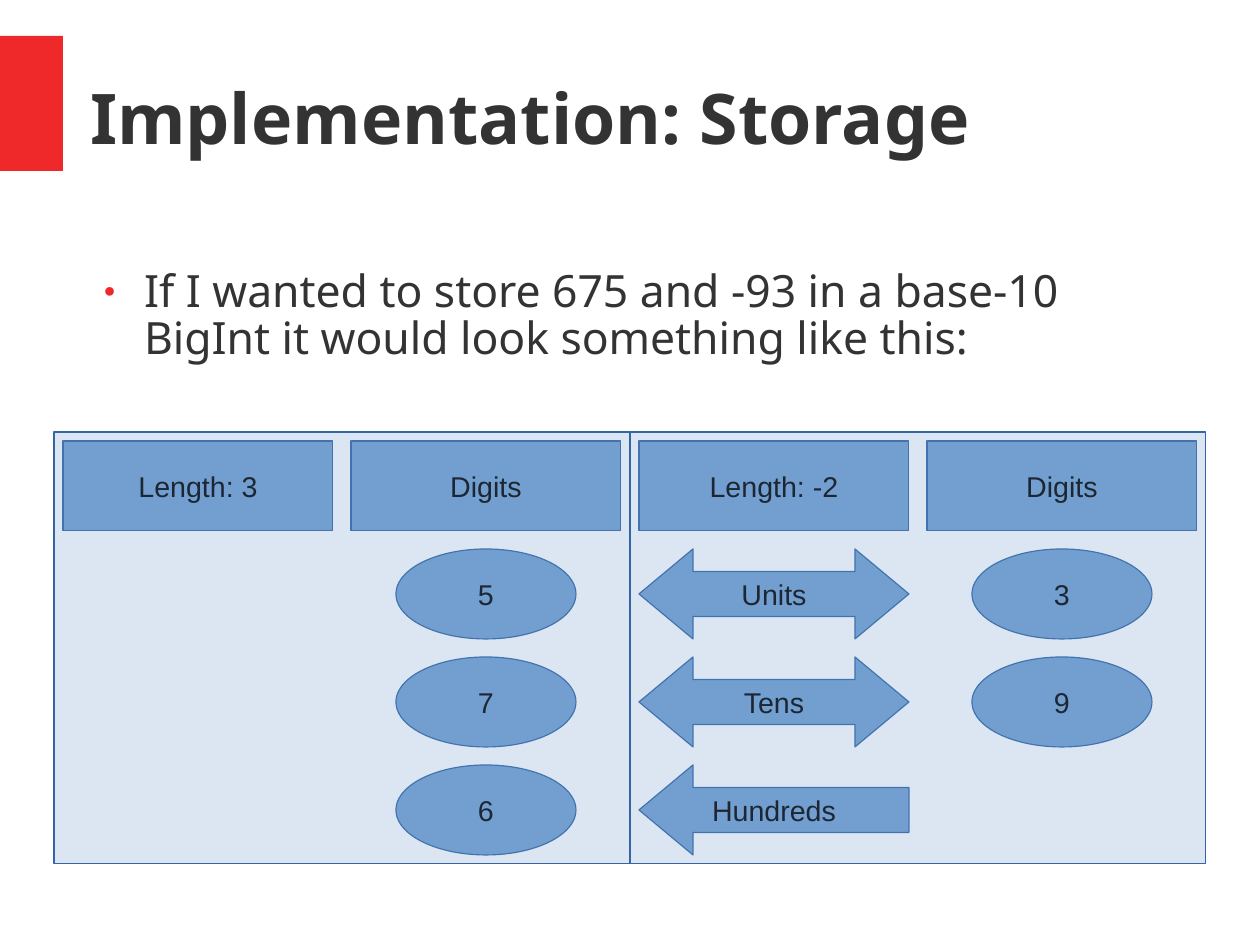
from dataclasses import dataclass
from typing import Any

from lxml.etree import SubElement
from pptx import Presentation
from pptx.dml.color import RGBColor
from pptx.enum.shapes import MSO_SHAPE as Preset
from pptx.enum.text import MSO_ANCHOR as Anchor, MSO_AUTO_SIZE as AutoSize, PP_ALIGN as Align
from pptx.oxml.ns import qn
from pptx.util import Cm, Pt

COLORS = {
    "accent": "EF2929",
    "heading": "333333",
    "block": "729FCF",
    "outline": "3465A4",
    "label": "000000",
}
NO_INSETS = {"margin_left": 0, "margin_right": 0, "margin_top": 0, "margin_bottom": 0}
TITLE_FRAME = {**NO_INSETS, "vertical_anchor": Anchor.MIDDLE, "word_wrap": True, "auto_size": AutoSize.NONE}
BODY_FRAME = {**TITLE_FRAME, "vertical_anchor": Anchor.TOP}
LABEL_FRAME = {"vertical_anchor": Anchor.MIDDLE, "word_wrap": False}
TITLE_FONT = {"name": "Noto Sans", "size": Pt(44), "bold": True}
BODY_FONT = {"name": "Noto Sans", "size": Pt(28)}
LABEL_FONT = {"name": "Arial", "size": Pt(18)}
TITLE_PARAGRAPH = {"alignment": Align.LEFT}
BODY_PARAGRAPH = {
    "alignment": Align.LEFT,
    "line_spacing": 0.88,
    "space_before": Pt(0),
    "space_after": Pt(14.1),
}
LABEL_PARAGRAPH = {"alignment": Align.CENTER}

PANEL_LEFT, PANEL_TOP, PANEL_SIZE = 1.2, 9.6, 12.8
PANEL_HEIGHT = 9.6
PADDING = 0.2
COLUMN_WIDTH, COLUMN_STEP = 6, 6.4
ROW_HEIGHT, ROW_STEP = 2, 2.4
DIGIT_WIDTH = 4
ARROW_HEAD = 0.6


@dataclass(frozen=True)
class Number:
    length: str
    digits: str


@dataclass(frozen=True)
class Place:
    name: str
    arrow: Preset
    right_inset: float = 0.25


NUMBERS = [Number("Length: 3", "576"), Number("Length: -2", "39")]
PLACES = [
    Place("Units", Preset.LEFT_RIGHT_ARROW),
    Place("Tens", Preset.LEFT_RIGHT_ARROW),
    Place("Hundreds", Preset.LEFT_ARROW, 0.85),
]


def apply(target: Any, values: dict[str, Any]) -> None:
    for attribute, value in values.items():
        setattr(target, attribute, value)


def rgb(name: str) -> RGBColor:
    return RGBColor.from_string(COLORS[name])


def write(shape: Any, text: str, frame: dict, paragraph: dict, font: dict, color: str) -> Any:
    apply(shape.text_frame, frame)
    line = shape.text_frame.paragraphs[0]
    apply(line, paragraph)
    run = line.add_run()
    run.text = text
    apply(run.font, font)
    run.font.color.rgb = rgb(color)
    return line


def place(shape: Any, left: float, top: float, width: float, height: float) -> None:
    apply(shape, {"left": Cm(left), "top": Cm(top), "width": Cm(width), "height": Cm(height)})


def add_block(slide: Any, preset: Preset, left: float, top: float, width: float, height: float) -> Any:
    block = slide.shapes.add_shape(preset, Cm(left), Cm(top), Cm(width), Cm(height))
    block.shadow.inherit = False
    block.fill.solid()
    block.fill.fore_color.rgb = rgb("block")
    block.line.color.rgb = rgb("outline")
    block.line.width = Pt(0.75)
    return block


def add_cell(slide: Any, preset: Preset, column: int, row: int, text: str, width: float = COLUMN_WIDTH) -> Any:
    left = PANEL_LEFT + PADDING + column * COLUMN_STEP + (COLUMN_WIDTH - width) / 2
    top = PANEL_TOP + PADDING + row * ROW_STEP
    cell = add_block(slide, preset, left, top, width, ROW_HEIGHT)
    write(cell, text, LABEL_FRAME, LABEL_PARAGRAPH, LABEL_FONT, "label")
    return cell


def add_number(slide: Any, index: int, number: Number) -> None:
    add_cell(slide, Preset.RECTANGLE, 2 * index, 0, number.length)
    add_cell(slide, Preset.RECTANGLE, 2 * index + 1, 0, "Digits")
    for row, digit in enumerate(number.digits, 1):
        add_cell(slide, Preset.OVAL, 2 * index + 1, row, digit, DIGIT_WIDTH)


def add_place(slide: Any, row: int, digit_place: Place) -> None:
    arrow = add_cell(slide, digit_place.arrow, 2, row, digit_place.name)
    arrow.adjustments[1] = ARROW_HEAD
    arrow.text_frame.margin_right = Cm(digit_place.right_inset)


def add_panel(slide: Any, index: int) -> None:
    panel = add_block(
        slide, Preset.RECTANGLE, PANEL_LEFT + index * PANEL_SIZE, PANEL_TOP, PANEL_SIZE, PANEL_HEIGHT
    )
    tint = panel._element.spPr.find(qn("a:solidFill")).find(qn("a:srgbClr"))
    SubElement(tint, qn("a:alpha"), val="25000")


def add_bullet(paragraph: Any) -> None:
    properties = paragraph._p.get_or_add_pPr()
    apply_indent = {"marL": Cm(1.2), "indent": Cm(-0.9)}
    for key, value in apply_indent.items():
        properties.set(key, str(int(value)))
    bullet_color = SubElement(properties, qn("a:buClr"))
    SubElement(bullet_color, qn("a:srgbClr"), val=COLORS["accent"])
    SubElement(properties, qn("a:buSzPct"), val="45000")
    SubElement(properties, qn("a:buChar"), char="●")


def main() -> None:
    deck = Presentation()
    apply(deck, {"slide_width": Cm(28), "slide_height": Cm(21)})
    slide = deck.slides.add_slide(deck.slide_layouts[1])

    accent_bar = add_block(slide, Preset.RECTANGLE, 0, 0.8, 1.4, 3)
    accent_bar.fill.fore_color.rgb = rgb("accent")
    accent_bar.line.fill.background()

    heading, statement = slide.placeholders
    place(heading, 2, 0.85, 24.6, 3.5)
    write(heading, "Implementation: Storage", TITLE_FRAME, TITLE_PARAGRAPH, TITLE_FONT, "heading")
    place(statement, 2, 6, 24, 3)
    sentence = write(
        statement,
        "If I wanted to store 675 and -93 in a base-10 BigInt it would look something like this:",
        BODY_FRAME, BODY_PARAGRAPH, BODY_FONT, "heading",
    )
    add_bullet(sentence)

    for index, number in enumerate(NUMBERS):
        add_number(slide, index, number)
    for row, digit_place in enumerate(PLACES, 1):
        add_place(slide, row, digit_place)
    for index in range(len(NUMBERS)):
        add_panel(slide, index)

    deck.save("out.pptx")


if __name__ == "__main__":
    main()
